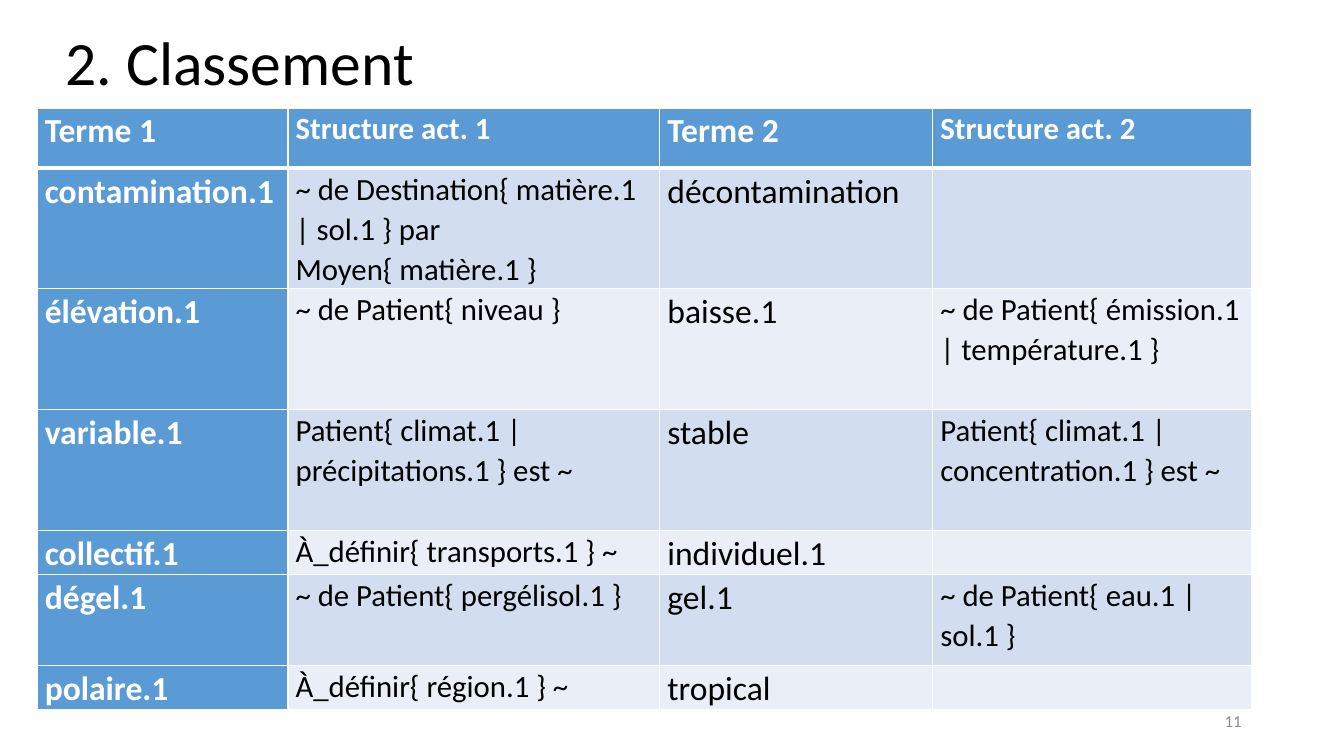
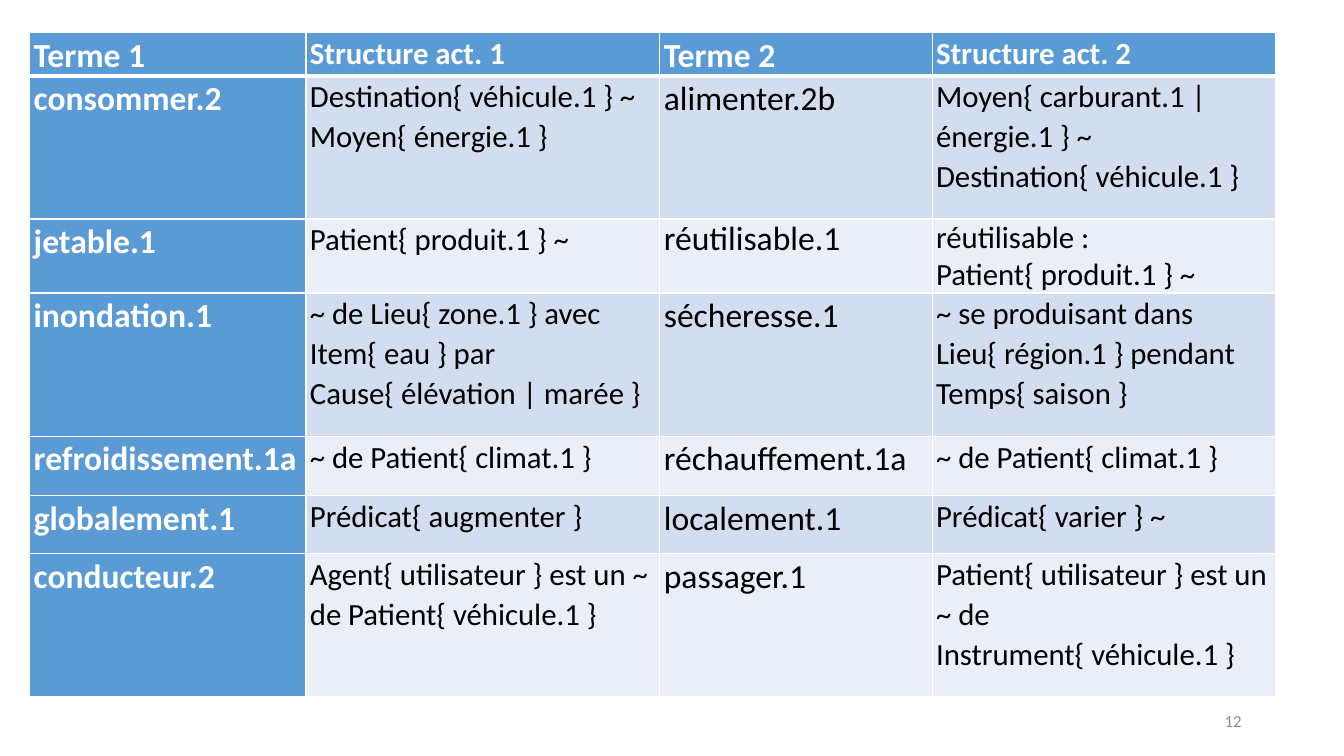
from lxml.etree import SubElement
from pptx import Presentation
from pptx.dml.color import RGBColor
from pptx.enum.text import MSO_ANCHOR as Anchor, MSO_AUTO_SIZE as AutoSize, PP_ALIGN as Align
from pptx.oxml.ns import qn
from pptx.util import Cm, Pt

FONT = "Calibri"
WHITE, BLACK, GREY = "FFFFFF", "000000", "8C8C8C"
BLUE, BANDS = "5B9BD5", ("D2DEEF", "EAEFF7")
TERM_SIZE, STRUCTURE_SIZE = 24, 22
TITLE_LAYOUT, BLANK_LAYOUT = 5, 6
HEADINGS = ("Terme 1", "Structure act. 1", "Terme 2", "Structure act. 2")

SLIDES = [
    {
        "number": 11,
        "title": "2. Classement",
        "corner": (0.94, 2.72),
        "columns": (6.32, 9.37, 6.88, 8.03),
        "heights": (1.52, 2.31, 3.05, 3.05, 0.76, 2.29, 0.76),
        "inset": 0.19,
        "single_spaced": (),
        "rows": [
            ("contamination.1", "~ de Destination{ matière.1 | sol.1 } par Moyen{ matière.1 }",
             "décontamination", ""),
            ("élévation.1", "~ de Patient{ niveau }",
             "baisse.1", "~ de Patient{ émission.1 | température.1 }"),
            ("variable.1", "Patient{ climat.1 | précipitations.1 } est ~",
             "stable", "Patient{ climat.1 | concentration.1 } est ~"),
            ("collectif.1", "À_définir{ transports.1 } ~", "individuel.1", ""),
            ("dégel.1", "~ de Patient{ pergélisol.1 }",
             "gel.1", "~ de Patient{ eau.1 | sol.1 }"),
            ("polaire.1", "À_définir{ région.1 } ~", "tropical", ""),
        ],
    },
    {
        "number": 12,
        "title": None,
        "corner": (0.75, 0.82),
        "columns": (6.96, 8.92, 6.86, 8.66),
        "heights": (0.86, 3.61, 1.45, 3.61, 1.5, 1.45, 3.61),
        "inset": 0.1,
        "single_spaced": ((2, 2), (2, 3)),
        "rows": [
            ("consommer.2", "Destination{ véhicule.1 } ~ Moyen{ énergie.1 }",
             "alimenter.2b", "Moyen{ carburant.1 | énergie.1 } ~ Destination{ véhicule.1 }"),
            ("jetable.1", "Patient{ produit.1 } ~",
             "réutilisable.1", "réutilisable : Patient{ produit.1 } ~"),
            ("inondation.1", "~ de Lieu{ zone.1 } avec Item{ eau } par Cause{ élévation | marée }",
             "sécheresse.1", "~ se produisant dans Lieu{ région.1 } pendant Temps{ saison }"),
            ("refroidissement.1a", "~ de Patient{ climat.1 }",
             "réchauffement.1a", "~ de Patient{ climat.1 }"),
            ("globalement.1", "Prédicat{ augmenter }",
             "localement.1", "Prédicat{ varier } ~"),
            ("conducteur.2", "Agent{ utilisateur } est un ~ de Patient{ véhicule.1 }",
             "passager.1", "Patient{ utilisateur } est un ~ de Instrument{ véhicule.1 }"),
        ],
    },
]


def color(value):
    return RGBColor.from_string(value)


def set_all(target, **values):
    for name, value in values.items():
        setattr(target, name, value)


def write(frame, text, size, ink, bold=False, **paragraph_format):
    para = frame.paragraphs[0]
    set_all(para, **paragraph_format)
    span = para.add_run()
    span.text = text
    set_all(span.font, name=FONT, size=Pt(size), bold=bold)
    span.font.color.rgb = color(ink)


def add_borders(cell, **widths):
    properties = cell._tc.get_or_add_tcPr()
    for side, width in widths.items():
        line = SubElement(properties, qn(f"a:ln{side}"), w=str(Pt(width)))
        fill = SubElement(line, qn("a:solidFill"))
        SubElement(fill, qn("a:srgbClr"), val=WHITE)


def add_title(page, text):
    title = page.shapes.title
    set_all(title, left=Cm(1.4), top=Cm(0.61), width=Cm(29.21), height=Cm(2.08))
    set_all(title.text_frame, vertical_anchor=Anchor.MIDDLE, auto_size=AutoSize.NONE, word_wrap=True)
    write(title.text_frame, text, 44, BLACK, alignment=Align.LEFT, line_spacing=0.9)


def add_page_number(page, number):
    box = page.shapes.add_textbox(Cm(23.92), Cm(17.66), Cm(7.62), Cm(1.01))
    set_all(box.text_frame, word_wrap=True, vertical_anchor=Anchor.MIDDLE)
    write(box.text_frame, str(number), 12, GREY, alignment=Align.RIGHT)


def add_terms_table(page, content):
    rows = [HEADINGS, *content["rows"]]
    columns, heights = content["columns"], content["heights"]
    left, top = content["corner"]
    table = page.shapes.add_table(
        len(rows), len(columns), Cm(left), Cm(top), Cm(sum(columns)), Cm(sum(heights))
    ).table
    for column, width in zip(table.columns, columns):
        column.width = Cm(width)
    for row, height in zip(table.rows, heights):
        row.height = Cm(height)
    for r, texts in enumerate(rows):
        for c, text in enumerate(texts):
            cell = table.cell(r, c)
            heading = r == 0 or c == 0
            add_borders(cell, L=1, R=1, T=3 if r == 1 else 1, B=3 if r == 0 else 1)
            cell.fill.solid()
            cell.fill.fore_color.rgb = color(BLUE if heading else BANDS[(r - 1) % 2])
            if not text:
                continue
            inset = Cm(content["inset"])
            set_all(cell, margin_left=inset, margin_right=inset, margin_top=0, margin_bottom=0)
            write(
                cell.text_frame, text,
                STRUCTURE_SIZE if c % 2 else TERM_SIZE,
                WHITE if heading else BLACK,
                bold=heading,
                line_spacing=1.0 if (r, c) in content["single_spaced"] else 1.07,
            )


def main():
    deck = Presentation()
    set_all(deck, slide_width=Cm(33.87), slide_height=Cm(19.05))
    for content in SLIDES:
        layout = TITLE_LAYOUT if content["title"] else BLANK_LAYOUT
        page = deck.slides.add_slide(deck.slide_layouts[layout])
        if content["title"]:
            add_title(page, content["title"])
        add_terms_table(page, content)
        add_page_number(page, content["number"])
    deck.save("out.pptx")


if __name__ == "__main__":
    main()
